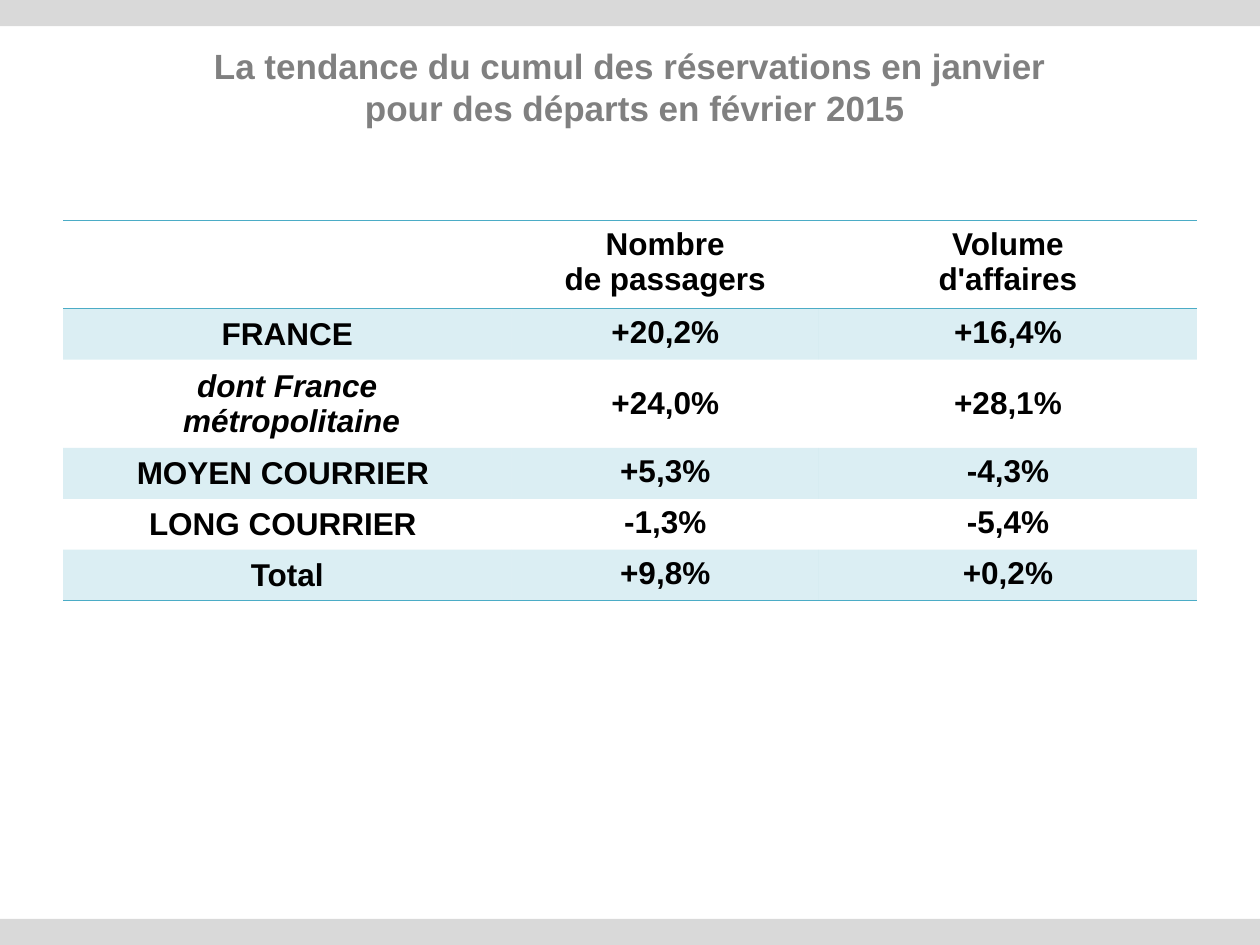
from lxml import etree
from pptx import Presentation
from pptx.dml.color import RGBColor
from pptx.enum.shapes import MSO_SHAPE
from pptx.enum.text import MSO_ANCHOR, PP_ALIGN
from pptx.oxml.ns import qn
from pptx.util import Pt

RECTANGLE = MSO_SHAPE.RECTANGLE
CENTER = PP_ALIGN.CENTER
TOP, MIDDLE = MSO_ANCHOR.TOP, MSO_ANCHOR.MIDDLE
WIDTH, HEIGHT = 720, 540
BAR_HEIGHT = 15
GRAY, BLACK, TEAL = "808080", "000000", "4BACC6"
BAR_COLOR = "D9D9D9"
BAND_ALPHA = 20
PLAIN_STYLE = "{2D5ABB26-0587-4C30-8999-92F81FD0307C}"
TITLE = "La tendance du cumul des réservations en janvier\n pour des départs en février 2015"
COLUMN_WIDTHS = [256.3, 175.7, 216]
LINE_HEIGHT, CELL_PADDING = 20, 9.1
ROWS = [
    [[], ["Nombre", "de passagers"], ["Volume", "d'affaires"]],
    [["FRANCE"], ["+20,2%"], ["+16,4%"]],
    [["dont France", " métropolitaine"], ["+24,0%"], ["+28,1%"]],
    [["MOYEN COURRIER "], ["+5,3%"], ["-4,3%"]],
    [["LONG COURRIER "], ["-1,3%"], ["-5,4%"]],
    [["Total"], ["+9,8%"], ["+0,2%"]],
]
SUBTOTAL_ROW = 2
BORDERS = {0: ["lnT", "lnB"], len(ROWS) - 1: ["lnB"]}


def color(value):
    return RGBColor.from_string(value)


class SlideBuilder:
    font = {"name": "Arial", "bold": True}

    def __init__(self, slide):
        self.slide = slide

    def text(self, paragraph, text, size, text_color, **formats):
        paragraph.text = text
        paragraph.alignment = CENTER
        for run in paragraph.runs:
            for name, value in {**self.font, "size": Pt(size), **formats}.items():
                setattr(run.font, name, value)
            run.font.color.rgb = color(text_color)

    def bar(self, top):
        shape = self.slide.shapes.add_shape(RECTANGLE, 0, Pt(top), Pt(WIDTH), Pt(BAR_HEIGHT))
        shape.shadow.inherit = False
        shape.fill.solid()
        shape.fill.fore_color.rgb = color(BAR_COLOR)
        shape.line.fill.background()

    def title(self, text, left, top, width, height):
        box = self.slide.shapes.add_textbox(Pt(left), Pt(top), Pt(width), Pt(height))
        frame = box.text_frame
        frame.word_wrap = True
        frame.vertical_anchor = MIDDLE
        self.text(frame.paragraphs[0], text, 20, GRAY)

    def border(self, cell, side):
        properties = cell._tc.get_or_add_tcPr()
        line = etree.SubElement(properties, qn(f"a:{side}"), w=str(Pt(1)))
        fill = etree.SubElement(line, qn("a:solidFill"))
        etree.SubElement(fill, qn("a:srgbClr"), val=TEAL)

    def band(self, cell):
        cell.fill.solid()
        cell.fill.fore_color.rgb = color(TEAL)
        tint = cell._tc.tcPr.find(qn("a:solidFill")).find(qn("a:srgbClr"))
        etree.SubElement(tint, qn("a:alpha"), val=str(BAND_ALPHA * 1000))

    def cell(self, cell, lines, row, column):
        subtotal = row == SUBTOTAL_ROW
        cell.vertical_anchor = MIDDLE if subtotal or (row and column == 0) else TOP
        frame = cell.text_frame
        for index, line in enumerate(lines):
            paragraph = frame.add_paragraph() if index else frame.paragraphs[0]
            self.text(paragraph, line, 18, BLACK, italic=subtotal and column == 0)
        for side in BORDERS.get(row, []):
            self.border(cell, side)
        if row % 2:
            self.band(cell)
        else:
            cell.fill.background()

    def table(self, rows, left, top):
        heights = [max(map(len, row)) * LINE_HEIGHT + CELL_PADDING for row in rows]
        frame = self.slide.shapes.add_table(
            len(rows), len(COLUMN_WIDTHS), Pt(left), Pt(top),
            Pt(sum(COLUMN_WIDTHS)), Pt(sum(heights)))
        table = frame.table
        table.first_row = table.horz_banding = False
        table._tbl.tblPr.find(qn("a:tableStyleId")).text = PLAIN_STYLE
        for column, width in zip(table.columns, COLUMN_WIDTHS):
            column.width = Pt(width)
        for row, (cells, height) in enumerate(zip(rows, heights)):
            table.rows[row].height = Pt(height)
            for column, lines in enumerate(cells):
                self.cell(table.cell(row, column), lines, row, column)


def main():
    presentation = Presentation()
    presentation.slide_width = Pt(WIDTH)
    presentation.slide_height = Pt(HEIGHT)
    builder = SlideBuilder(presentation.slides.add_slide(presentation.slide_layouts[6]))
    for top in (0, HEIGHT - BAR_HEIGHT):
        builder.bar(top)
    builder.title(TITLE, 20, 21, 680, 57)
    builder.table(ROWS, 36, 126)
    presentation.save("out.pptx")


if __name__ == "__main__":
    main()
